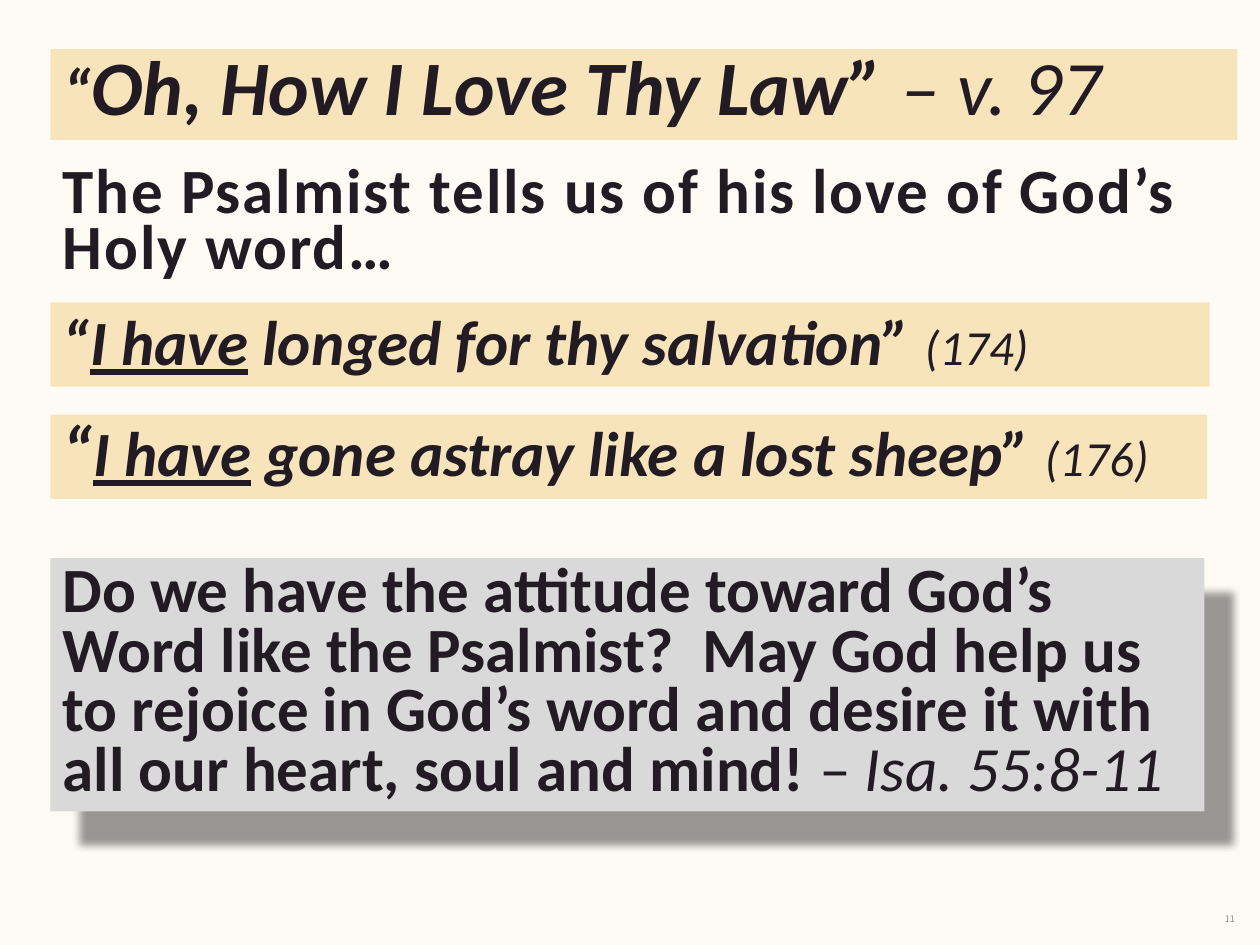
import pptx
import pptx.util
import pptx.dml.color
import pptx.enum.shapes
import pptx.enum.text
import pptx.oxml
import pptx.oxml.ns
from pptx.util import Inches

COLORS = {
    "page": "FEFBF5",
    "ink": "231B23",
    "verse": "F7E4BA",
    "question": "D9D9D9",
    "number": "8D8D8D",
    "shadow": "000000",
}
LEFT = 0.4
BOLD = {"bold": True}
QUOTE = {"bold": True, "italic": True}
STRESS = {"bold": True, "italic": True, "underline": True}
REFERENCE = {"italic": True}


def rgb(name):
    return pptx.dml.color.RGBColor.from_string(COLORS[name])


def write(box, spans, line_height=None, font="Calibri", color="ink",
          align=pptx.enum.text.PP_ALIGN.LEFT,
          anchor=pptx.enum.text.MSO_ANCHOR.TOP):
    frame = box.text_frame
    frame.word_wrap = True
    frame.auto_size = pptx.enum.text.MSO_AUTO_SIZE.NONE
    frame.vertical_anchor = anchor
    para = frame.paragraphs[0]
    para.alignment = align
    if line_height:
        para.line_spacing = pptx.util.Pt(line_height)
    for text, size, style in spans:
        span = para.add_run()
        span.text = text
        span.font.name = font
        span.font.size = pptx.util.Pt(size)
        span.font.color.rgb = rgb(color)
        span.font.bold = style.get("bold", False)
        span.font.italic = style.get("italic", False)
        span.font.underline = style.get("underline", False)
    return para


def fill_box(box, color):
    box.fill.solid()
    box.fill.fore_color.rgb = rgb(color)
    box.line.fill.background()


def add_panel(page, left, top, width, height, color):
    box = page.shapes.add_shape(
        pptx.enum.shapes.MSO_SHAPE.RECTANGLE,
        Inches(left), Inches(top), Inches(width), Inches(height))
    box.shadow.inherit = False
    fill_box(box, color)
    return box


def add_title(page, left, top, width, height):
    title = page.shapes.title
    title.left, title.top = Inches(left), Inches(top)
    title.width, title.height = Inches(width), Inches(height)
    fill_box(title, "verse")
    write(title, [("“", 37, QUOTE),
                  ("Oh, How I Love Thy Law” ", 44, QUOTE),
                  ("– v. 97", 44, REFERENCE)], 43)


def add_intro(page, left, top, width, height):
    box = page.shapes.add_textbox(
        Inches(left), Inches(top), Inches(width), Inches(height))
    para = write(
        box, [("The Psalmist tells us of his love of God’s Holy word…", 36, BOLD)], 32)
    para.runs[0].font._element.set("spc", "110")


def add_verse(page, left, top, width, height, quote_size, words, reference):
    box = add_panel(page, left, top, width, height, "verse")
    write(box, [("“", quote_size, QUOTE), ("I have", 36, STRESS),
                (words, 36, QUOTE), (reference, 28, REFERENCE)], 40)


def add_shadow(box, blur, distance, angle, alpha):
    effects = box._element.spPr.find(pptx.oxml.ns.qn("a:effectLst"))
    effects.append(pptx.oxml.parse_xml(
        f'<a:outerShdw {pptx.oxml.ns.nsdecls("a")} blurRad="{pptx.util.Pt(blur)}" '
        f'dist="{pptx.util.Pt(distance)}" dir="{angle * 60000}" algn="tl" rotWithShape="0">'
        f'<a:srgbClr val="{COLORS["shadow"]}"><a:alpha val="{alpha * 1000}"/></a:srgbClr>'
        '</a:outerShdw>'))


def add_question(page, left, top, width, height):
    box = add_panel(page, left, top, width, height, "question")
    add_shadow(box, blur=4, distance=25, angle=50, alpha=40)
    question = ("Do we have the attitude toward God’s Word like the Psalmist?  "
                "May God help us to rejoice in God’s word and desire it with "
                "all our heart, soul and mind! ")
    write(box, [(question, 36, BOLD), ("– ", 36, {}),
                ("Isa. 55:8-11", 36, REFERENCE)], 34,
          anchor=pptx.enum.text.MSO_ANCHOR.MIDDLE)


def add_page_number(page, left, top, width, height):
    box = page.shapes.add_textbox(
        Inches(left), Inches(top), Inches(width), Inches(height))
    write(box, [("11", 5.2, {})], font="Noto Sans CJK JP", color="number",
          align=pptx.enum.text.PP_ALIGN.RIGHT,
          anchor=pptx.enum.text.MSO_ANCHOR.MIDDLE)


def main():
    deck = pptx.Presentation()
    deck.slide_width, deck.slide_height = Inches(10), Inches(7.5)
    page = deck.slides.add_slide(deck.slide_layouts.get_by_name("Title Only"))
    page.background.fill.solid()
    page.background.fill.fore_color.rgb = rgb("page")

    add_title(page, LEFT, 0.39, 9.42, 0.72)
    add_intro(page, LEFT, 1.3, 9.6, 1)
    add_verse(page, LEFT, 2.4, 9.2, 0.67, 36,
              " longed for thy salvation” ", "(174)")
    add_verse(page, LEFT, 3.29, 9.18, 0.67, 40,
              " gone astray like a lost sheep” ", "(176)")
    add_question(page, LEFT, 4.43, 9.16, 2.01)
    add_page_number(page, 7.65, 7.17, 2.25, 0.25)
    deck.save("out.pptx")


if __name__ == "__main__":
    main()
